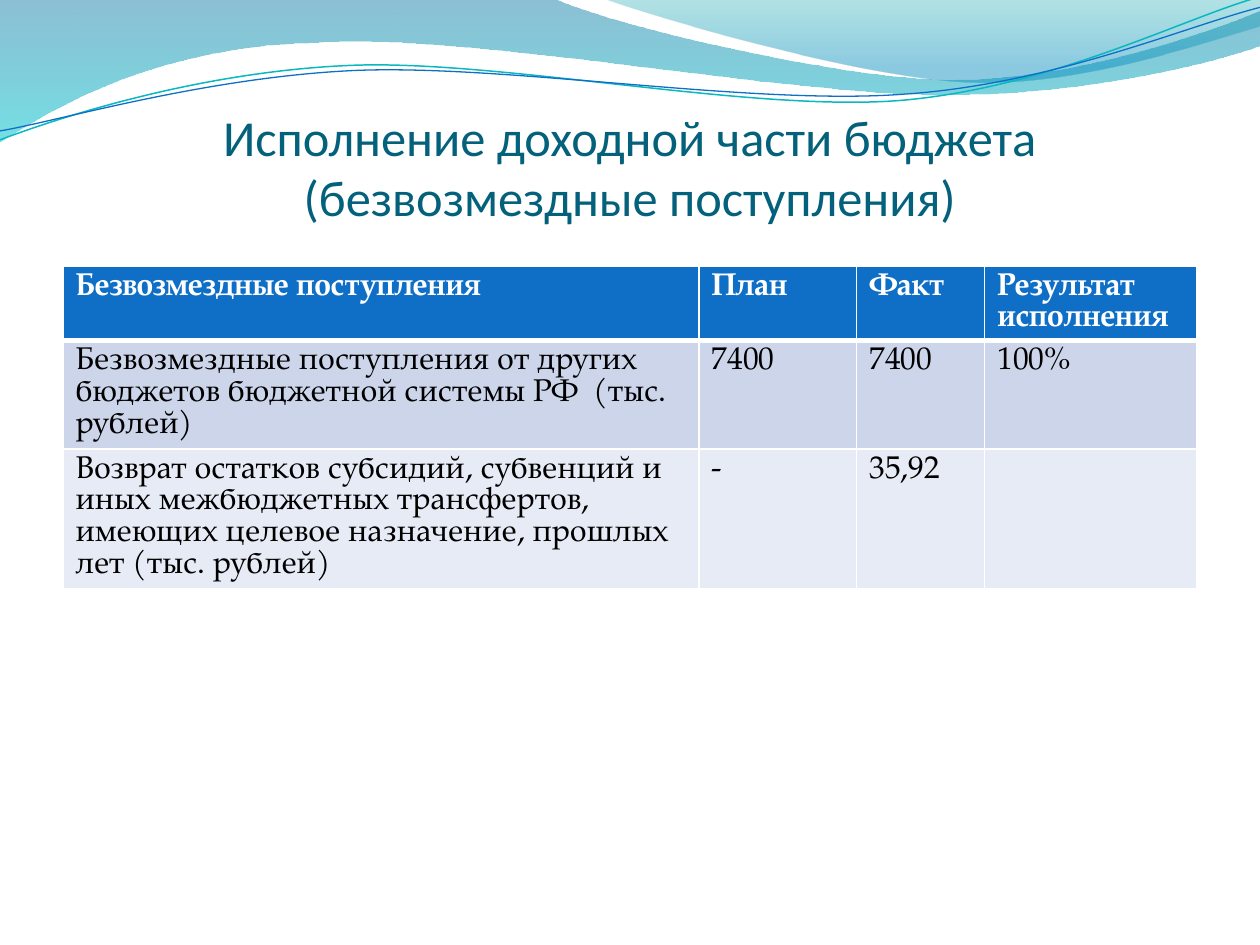
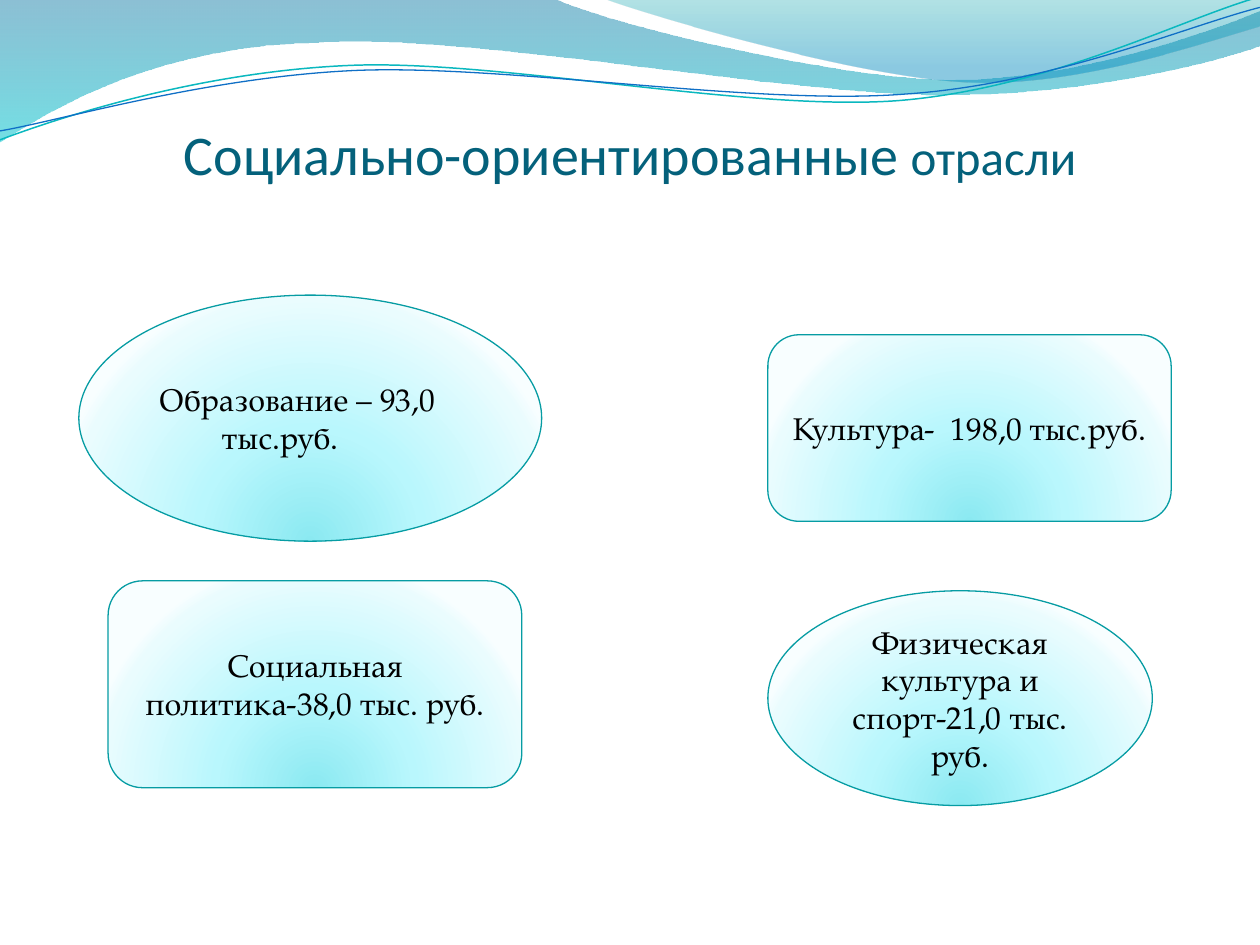
import pptx
import pptx.dml.color
import pptx.enum.shapes
import pptx.enum.text
import pptx.oxml
import pptx.oxml.ns
import pptx.util

Cm = pptx.util.Cm
Pt = pptx.util.Pt
Kind = pptx.enum.shapes.MSO_SHAPE
Align = pptx.enum.text.PP_ALIGN
Anchor = pptx.enum.text.MSO_ANCHOR
qn = pptx.oxml.ns.qn
SPACE = pptx.oxml.ns.nsdecls("a")

HEAD = "Calibri"
BODY = "TeX Gyre Pagella"
INK, WHITE, BLUE = "000000", "FFFFFF", "0F6FC6"
TITLE, TEAL, EDGE = "04617B", "0AB8BF", "069CA3"
ROWS = (BLUE, "CCD5EA", "E7EBF5")
DOWN = '<a:lin ang="5400000" scaled="0"/>'
GLOW = ('<a:path path="circle"><a:fillToRect l="50000" t="130000" '
        'r="50000" b="-30000"/></a:path>')
# Stops are (position %, colour, opacity %).
SEA = ((0, "0074A1", 45), (100, "00C6CF", 55))
SKY = ((0, "00A1A9", 30), (80, "008BBF", 45))
ICE = ((0, "8BE9F1", 100), (43, "B9F7FD", 100),
       (93, "EAFCFE", 100), (100, "F8FEFF", 100))

# Each leg holds one point (a straight) or three (a curve), in cm.
BAND = ([(0, 0)],
        [(11.18, -0.02)],
        [(12.09, 0.43), (16.87, 1.6), (19.25, 1.6)],
        [(21.67, 1.6), (24.33, 0.66), (25.4, 0.23)],
        [(25.43, 0.91)],
        [(24.97, 1.12), (22.1, 1.93), (18.95, 1.91)],
        [(15.8, 1.91), (9.7, 0.71), (6.53, 0.86)],
        [(3.25, 0.91), (1.17, 2.11), (-0.02, 2.87)],
        [(0, 0)])
CREST = ([(12.17, -0.02)],
         [(12.93, 0.28), (17.32, 1.57), (19.53, 1.65)],
         [(21.74, 1.75), (24.41, 0.81), (25.4, 0.53)],
         [(25.4, 0)],
         [(12.17, -0.02)])
UPPER = ([(0, 2.82)],
         [(1.22, 2.36), (4.01, 1.45), (7.04, 1.32)],
         [(10.03, 1.19), (15.06, 2.26), (18.11, 2.03)],
         [(21.16, 1.78), (23.83, 0.38), (25.35, -0.05)])
LOWER = ([(0, 2.64)],
         [(1.19, 2.44), (4.17, 1.55), (7.19, 1.42)],
         [(10.24, 1.3), (15.16, 2.13), (18.21, 1.9)],
         [(21.23, 1.7), (23.9, 0.53), (25.4, 0.15)])


def tint(code):
    return pptx.dml.color.RGBColor.from_string(code)


def bend(shape, legs):
    """Turn the straight segments of three-point legs into curves."""
    lines = list(shape.element.iter(qn("a:lnTo")))
    for line, leg in zip(lines, legs[1:]):
        if len(leg) == 3:
            dots = "".join(f'<a:pt x="{Cm(x) - shape.left}" y="{Cm(y) - shape.top}"/>'
                           for x, y in leg)
            line.getparent().replace(line, pptx.oxml.parse_xml(
                f'<a:cubicBezTo {SPACE}>{dots}</a:cubicBezTo>'))


def blend(shape, stops, way):
    """Give the shape a gradient fill."""
    marks = "".join(
        f'<a:gs pos="{pos * 1000}"><a:srgbClr val="{code}">'
        f'<a:alpha val="{seen * 1000}"/></a:srgbClr></a:gs>'
        for pos, code, seen in stops)
    shape.fill.solid()
    props = shape.element.spPr
    props.replace(props.find(qn("a:solidFill")), pptx.oxml.parse_xml(
        f'<a:gradFill {SPACE} rotWithShape="1">'
        f'<a:gsLst>{marks}</a:gsLst>{way}</a:gradFill>'))


def frame(cell, top, low):
    """Draw white cell borders; top and low are widths in points."""
    props = cell._tc.get_or_add_tcPr()
    for n, (side, width) in enumerate((("L", 1), ("R", 1), ("T", top), ("B", low))):
        props.insert(n, pptx.oxml.parse_xml(
            f'<a:ln{side} {SPACE} w="{Pt(width)}"><a:solidFill>'
            f'<a:srgbClr val="{WHITE}"/></a:solidFill></a:ln{side}>'))


class Deck:
    def __init__(self):
        self.file = pptx.Presentation()
        self.file.slide_width, self.file.slide_height = Cm(25.4), Cm(19.05)
        self.base = self.file.slide_layouts[5]
        self.slide = None

    def page(self):
        self.slide = self.file.slides.add_slide(self.base)

    def style(self, run, size, code, font=BODY, bold=False):
        run.font.name, run.font.size = font, Pt(size)
        run.font.bold, run.font.color.rgb = bold, tint(code)

    def wave(self, legs, stops=None, line=None, width=0.75):
        """Draw a wave and move it to the layout, so every slide shows it."""
        ends = [(Cm(leg[-1][0]), Cm(leg[-1][1])) for leg in legs]
        pen = self.slide.shapes.build_freeform(*ends[0])
        pen.add_line_segments(ends[1:], close=bool(stops))
        shape = pen.convert_to_shape()
        shape.shadow.inherit = False
        bend(shape, legs)
        if stops:
            blend(shape, stops, DOWN)
            shape.line.fill.background()
        else:
            shape.fill.background()
            shape.line.color.rgb = tint(line)
            shape.line.width = Pt(width)
        tree = self.base.shapes.element
        shape.element.nvSpPr.cNvPr.id = 100 + len(tree)
        tree.append(shape.element)

    def title(self, height, *parts):
        """Fill the title with parts given as (text, size)."""
        box = self.slide.shapes.title
        box.left, box.top = Cm(1.27), Cm(1.95)
        box.width, box.height = Cm(22.86), Cm(height)
        text = box.text_frame
        text.word_wrap = True
        text.auto_size = pptx.enum.text.MSO_AUTO_SIZE.NONE
        text.vertical_anchor = Anchor.BOTTOM
        text.margin_left = text.margin_right = text.margin_bottom = 0
        text.margin_top = Cm(0.13)
        para = text.paragraphs[0]
        para.alignment = Align.CENTER
        for words, size in parts:
            run = para.add_run()
            run.text = words
            self.style(run, size, TITLE, HEAD)

    def table(self, left, top, wide, high, data):
        table = self.slide.shapes.add_table(
            len(high), len(wide), Cm(left), Cm(top),
            Cm(sum(wide)), Cm(sum(high))).table
        table.horz_banding = False
        for col, width in zip(table.columns, wide):
            col.width = Cm(width)
        for r, line in enumerate(data):
            table.rows[r].height = Cm(high[r])
            for c, words in enumerate(line):
                cell = table.cell(r, c)
                cell.fill.solid()
                cell.fill.fore_color.rgb = tint(ROWS[r])
                frame(cell, 3 if r == 1 else 1, 3 if r == 0 else 1)
                para = cell.text_frame.paragraphs[0]
                para.text = words
                para.font.size = Pt(18)
                for run in para.runs:
                    self.style(run, 18, INK if r else WHITE, bold=r == 0)

    def bubble(self, kind, place, words, hang=0):
        """Add a glowing shape; hang sets a hanging indent in cm."""
        shape = self.slide.shapes.add_shape(kind, *map(Cm, place))
        shape.shadow.inherit = False
        blend(shape, ICE, GLOW)
        shape.line.color.rgb, shape.line.width = tint(EDGE), Pt(0.75)
        text = shape.text_frame
        text.text = words
        text.word_wrap = True
        text.vertical_anchor = Anchor.MIDDLE
        para = text.paragraphs[0]
        para.alignment = Align.LEFT if hang else Align.CENTER
        if hang:
            props = para._p.get_or_add_pPr()
            props.set("marL", str(Cm(hang)))
            props.set("indent", str(-Cm(hang)))
        self.style(para.runs[0], 18, INK)


def main():
    deck = Deck()
    deck.page()
    deck.wave(BAND, SEA)
    deck.wave(CREST, SKY)
    deck.wave(UPPER, line=TEAL, width=0.85)
    deck.wave(LOWER, line=BLUE)
    deck.title(2.62, ("Исполнение доходной части бюджета "
                      "(безвозмездные поступления)", 28.8))
    deck.table(1.27, 5.37, (12.82, 3.18, 2.58, 4.28), (1.48, 2.18, 2.8), (
        ("Безвозмездные поступления", "План", "Факт", "Результат исполнения"),
        ("Безвозмездные поступления от других бюджетов бюджетной системы "
         "РФ  (тыс. рублей)", "7400", "7400", "100%"),
        ("Возврат остатков субсидий, субвенций и иных межбюджетных "
         "трансфертов, имеющих целевое назначение, прошлых лет (тыс. рублей)",
         "-", "35,92", "")))

    deck.page()
    deck.title(1.81, ("Социально-ориентированные", 32), (" отрасли", 28))
    deck.bubble(Kind.OVAL, (1.59, 5.95, 9.33, 4.96),
                "Образование – 93,0 тыс.руб.", hang=1.27)
    deck.bubble(Kind.ROUNDED_RECTANGLE, (15.48, 6.75, 8.13, 3.76),
                "Культура-  198,0 тыс.руб.")
    deck.bubble(Kind.OVAL, (15.48, 11.91, 7.75, 4.33),
                "Физическая культура и спорт-21,0 тыс. руб.")
    deck.bubble(Kind.ROUNDED_RECTANGLE, (2.18, 11.71, 8.34, 4.17),
                "Социальная политика-38,0 тыс. руб.")
    deck.file.save("out.pptx")


if __name__ == "__main__":
    main()
